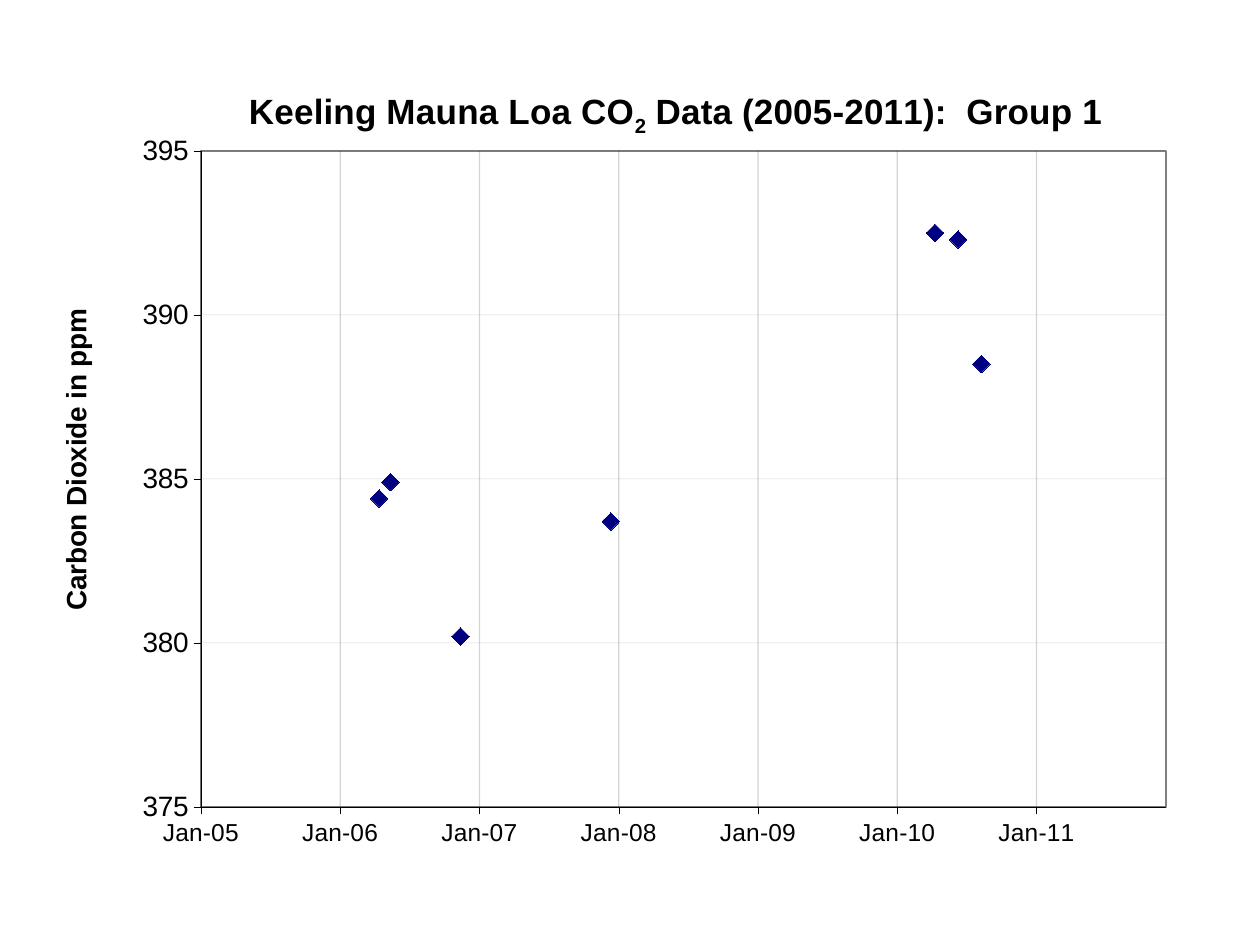
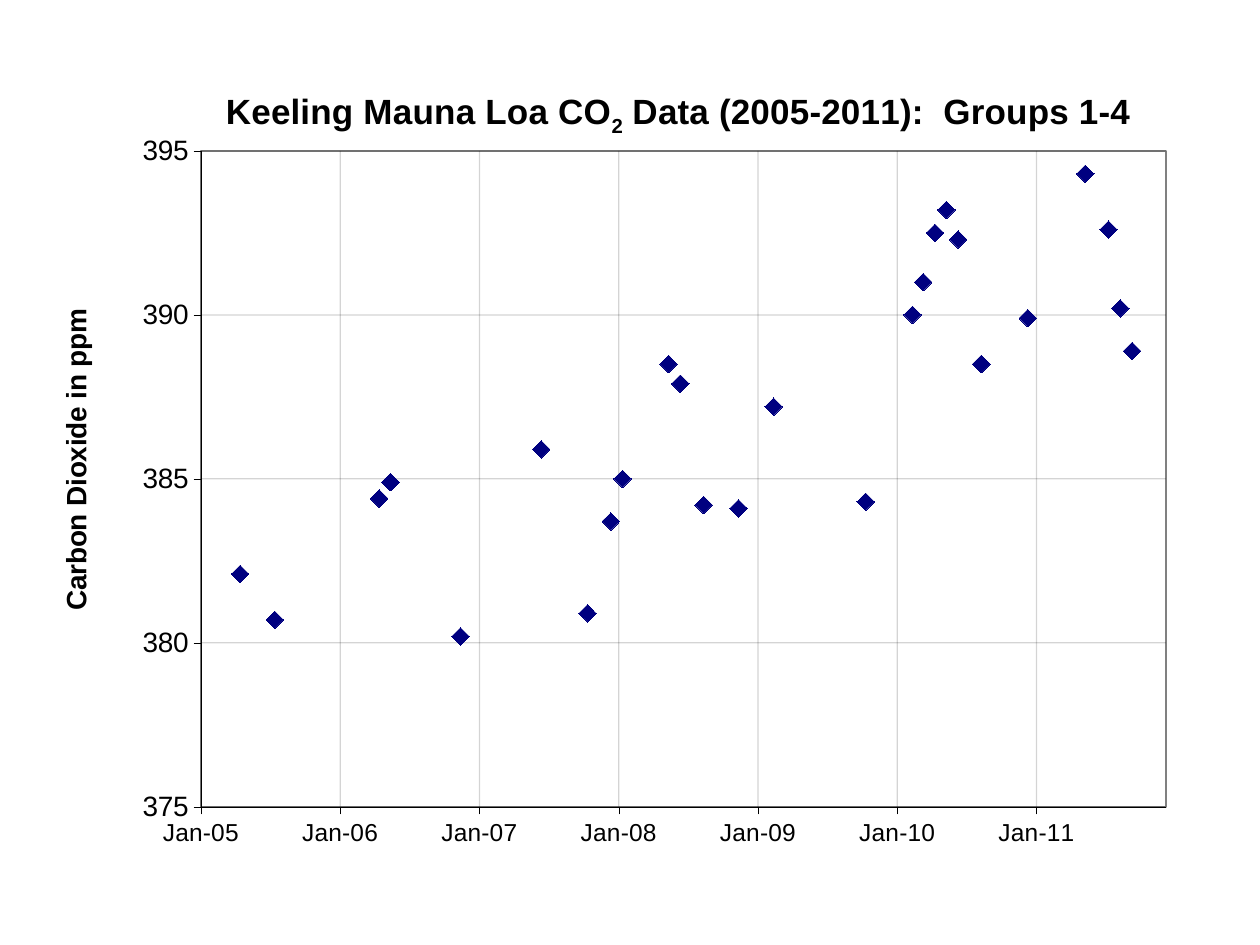
from dataclasses import dataclass

from pptx import Presentation
from pptx import util as u
from pptx.chart import data as chart_data
from pptx.dml.color import RGBColor
from pptx.enum import chart as kinds
from pptx.oxml import ns, parse_xml


@dataclass(frozen=True)
class Theme:
    font: str = "Arial"
    ink: RGBColor = RGBColor(0, 0, 0)
    marker: RGBColor = RGBColor(0, 0, 128)
    paper: str = "FFFFFF"
    frame: str = "808080"
    grid_alpha: int = 16000
    base_size: int = 10
    date_size: int = 14
    ppm_size: int = 16
    title_size: int = 20


THEME = Theme()
PX_PER_INCH = 126
DAYS_BEFORE_MONTH = (0, 31, 59, 90, 120, 151, 181, 212, 243, 273, 304, 334)
MID_JANUARY_2005 = 38367
BLANK_LAYOUT = 6
CHART_BOX = (39, 71, 1182, 803)
PLOT_BOX = (162, 80, 965, 656)

GROUPS = (
    ((2006, 4, 384.4), (2006, 5, 384.9), (2006, 11, 380.2), (2007, 12, 383.7),
     (2010, 4, 392.5), (2010, 6, 392.3), (2010, 8, 388.5)),
    ((2005, 7, 380.7), (2006, 5, 384.9), (2007, 6, 385.9), (2008, 6, 387.9),
     (2009, 2, 387.2), (2010, 2, 390), (2010, 8, 388.5), (2011, 5, 394.3)),
    ((2005, 4, 382.1), (2006, 4, 384.4), (2008, 1, 385), (2008, 6, 387.9),
     (2008, 11, 384.1), (2010, 3, 391), (2010, 5, 393.2), (2011, 8, 390.2)),
    ((2007, 10, 380.9), (2008, 5, 388.5), (2008, 8, 384.2), (2009, 10, 384.3),
     (2010, 12, 389.9), (2011, 7, 392.6), (2011, 9, 388.9)),
)


def px(length):
    return u.Emu(round(length * u.Inches(1) / PX_PER_INCH))


def mid_month(year, month):
    leap_day = int((year, month) > (2008, 2))
    return MID_JANUARY_2005 + 365 * (year - 2005) + DAYS_BEFORE_MONTH[month - 1] + leap_day


def set_layout(element, index, box, inner=False):
    old = element.find(ns.qn("c:layout"))
    if old is not None:
        element.remove(old)
    target = '<c:layoutTarget val="inner"/>' if inner else ""
    modes = "".join(f'<c:{key}Mode val="edge"/>' for key in "xy")
    values = "".join(
        f'<c:{key} val="{length / whole}"/>'
        for key, length, whole in zip("xywh", box, CHART_BOX[2:] * 2))
    element.insert(index, parse_xml(
        f'<c:layout {ns.nsdecls("c")}><c:manualLayout>{target}{modes}{values}'
        '</c:manualLayout></c:layout>'))


def style_font(font, size, bold=False):
    font.name = THEME.font
    font.size = u.Pt(size)
    font.bold = bold
    font.color.rgb = THEME.ink


def write_title(title, spans, size, corner):
    para = title.text_frame.paragraphs[0]
    for words, baseline in spans:
        span = para.add_run()
        span.text = words
        style_font(span.font, size, bold=True)
        if baseline:
            span.font._element.set("baseline", str(baseline))
    set_layout(title._element, 1, corner)


def style_axis(axis, limits, step, number_format, size, grid_width):
    axis.minimum_scale, axis.maximum_scale = limits
    axis.major_unit = step
    axis.major_tick_mark = kinds.XL_TICK_MARK.OUTSIDE
    axis.minor_tick_mark = kinds.XL_TICK_MARK.NONE
    axis.tick_labels.number_format = number_format
    axis.tick_labels.number_format_is_linked = False
    style_font(axis.tick_labels.font, size)
    axis.format.line.width = u.Pt(0.25)
    axis.format.line.color.rgb = THEME.ink
    axis.has_major_gridlines = True
    grid = axis.major_gridlines.format.line
    grid.width = u.Pt(grid_width)
    grid.color.rgb = THEME.ink
    color = grid._ln.find(".//" + ns.qn("a:srgbClr"))
    color.append(parse_xml(f'<a:alpha {ns.nsdecls("a")} val="{THEME.grid_alpha}"/>'))


def style_plot_area(chart):
    area = chart._chartSpace.chart.plotArea
    set_layout(area, 0, PLOT_BOX, inner=True)
    area.append(parse_xml(
        f'<c:spPr {ns.nsdecls("c", "a")}>'
        f'<a:solidFill><a:srgbClr val="{THEME.paper}"/></a:solidFill>'
        f'<a:ln w="{u.Pt(1)}"><a:solidFill><a:srgbClr val="{THEME.frame}"/>'
        '</a:solidFill></a:ln></c:spPr>'))


def style_markers(series):
    series.format.line.fill.background()
    series.marker.style = kinds.XL_MARKER_STYLE.DIAMOND
    series.marker.size = 10
    series.marker.format.fill.solid()
    series.marker.format.fill.fore_color.rgb = THEME.marker
    series.marker.format.line.color.rgb = THEME.marker


def add_scatter(page, groups):
    data = chart_data.XyChartData()
    series = data.add_series("Series 1")
    for group in groups:
        for year, month, ppm in group:
            series.add_data_point(mid_month(year, month), ppm)
    frame = page.shapes.add_chart(
        kinds.XL_CHART_TYPE.XY_SCATTER, *map(px, CHART_BOX), data)
    chart = frame.chart
    chart.has_legend = False
    style_font(chart.font, THEME.base_size)
    chart.plots[0].vary_by_categories = False
    style_markers(chart.plots[0].series[0])
    style_plot_area(chart)
    return chart


def add_keeling_slide(deck, groups, label, title_left, ppm_grid_width):
    page = deck.slides.add_slide(deck.slide_layouts[BLANK_LAYOUT])
    chart = add_scatter(page, groups)
    chart.has_title = True
    write_title(
        chart.chart_title,
        (("Keeling Mauna Loa CO", 0), ("2", -25000), (f" Data (2005-2011):  {label}", 0)),
        THEME.title_size, (title_left, 16))
    style_axis(chart.category_axis, (38354, 40890), 366, r"[$-409]mmm\-yy;@",
               THEME.date_size, 0.75)
    ppm_axis = chart.value_axis
    style_axis(ppm_axis, (375, 395), 5, "0", THEME.ppm_size, ppm_grid_width)
    ppm_axis.has_title = True
    write_title(ppm_axis.axis_title, (("Carbon Dioxide in ppm", 0),),
                THEME.ppm_size, (14, 233))
    body = ppm_axis.axis_title.text_frame._txBody.bodyPr
    body.set("rot", "-5400000")
    body.set("vert", "horz")


def main():
    deck = Presentation()
    deck.slide_width, deck.slide_height = px(1260), px(945)
    add_keeling_slide(deck, GROUPS[:1], "Group 1", 206, 0.25)
    add_keeling_slide(deck, GROUPS, "Groups 1-4", 183, 0.75)
    deck.save("out.pptx")


if __name__ == "__main__":
    main()
